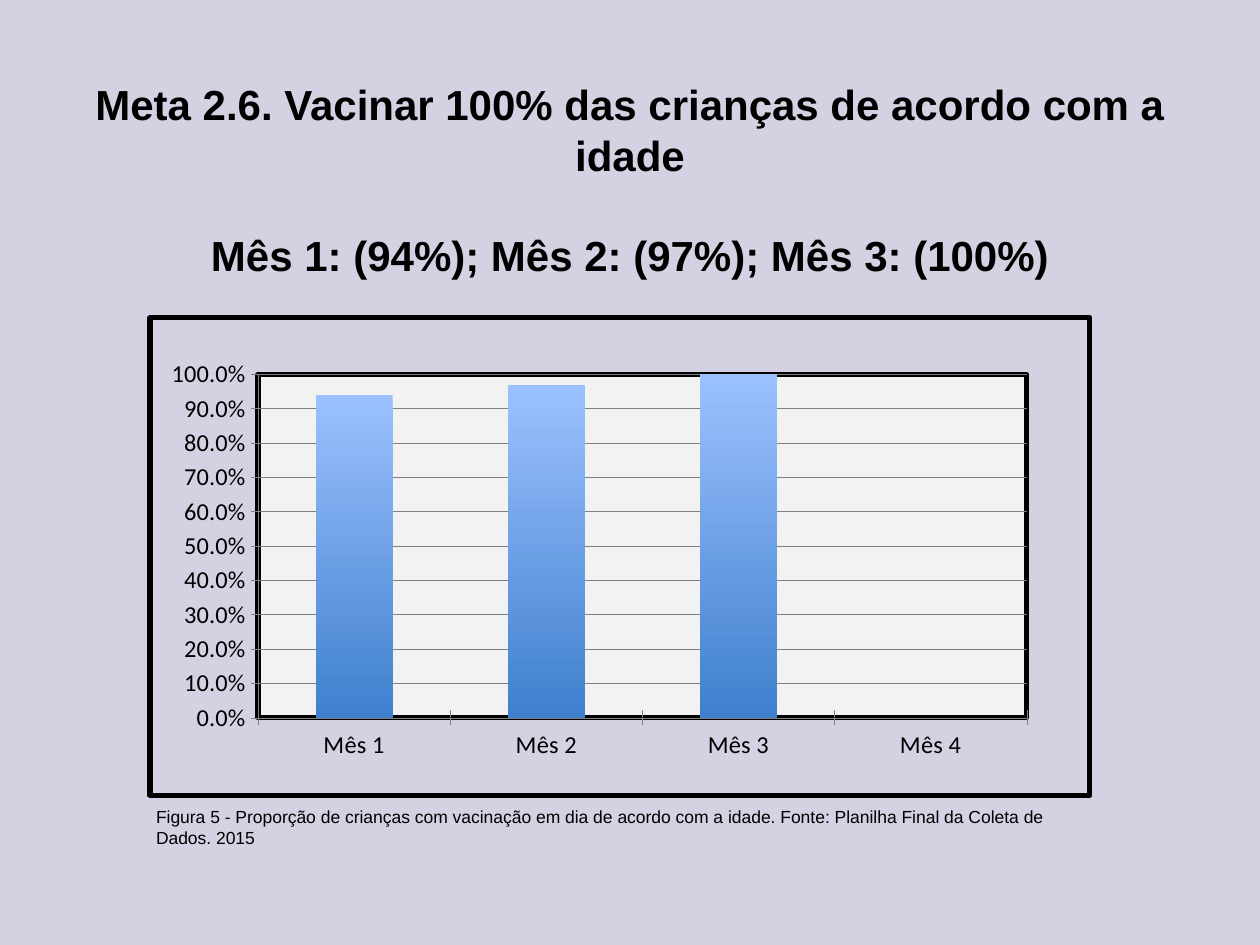
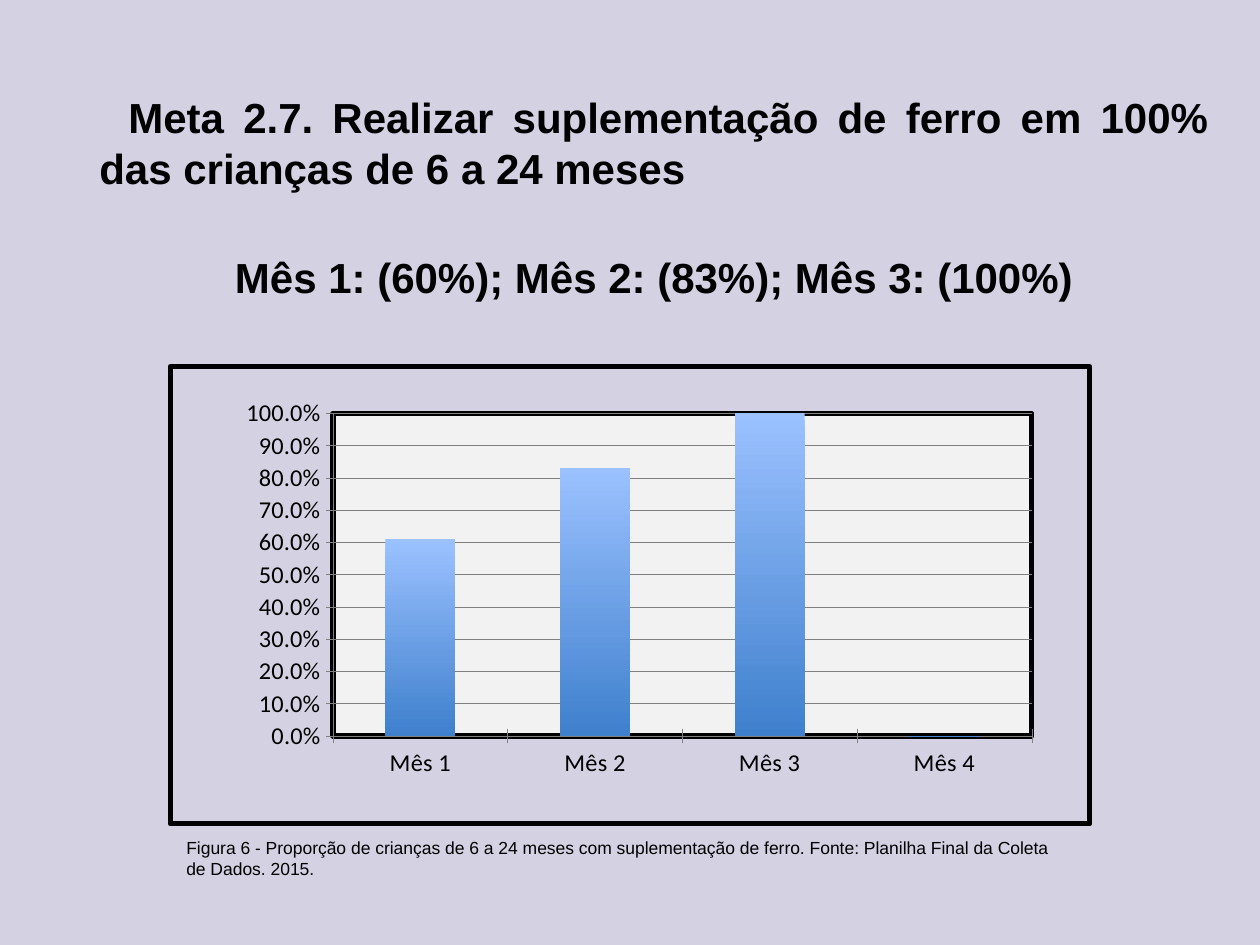
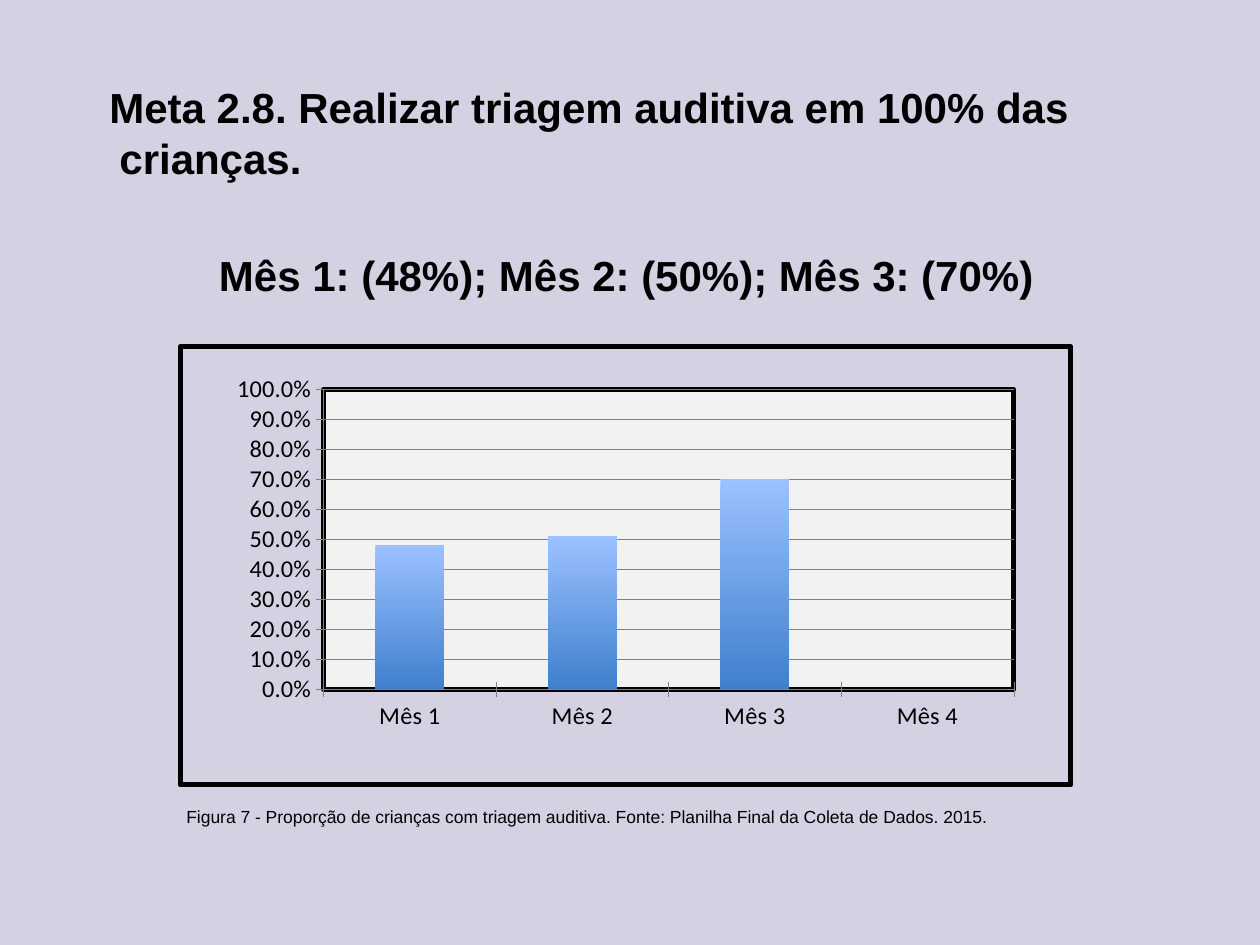
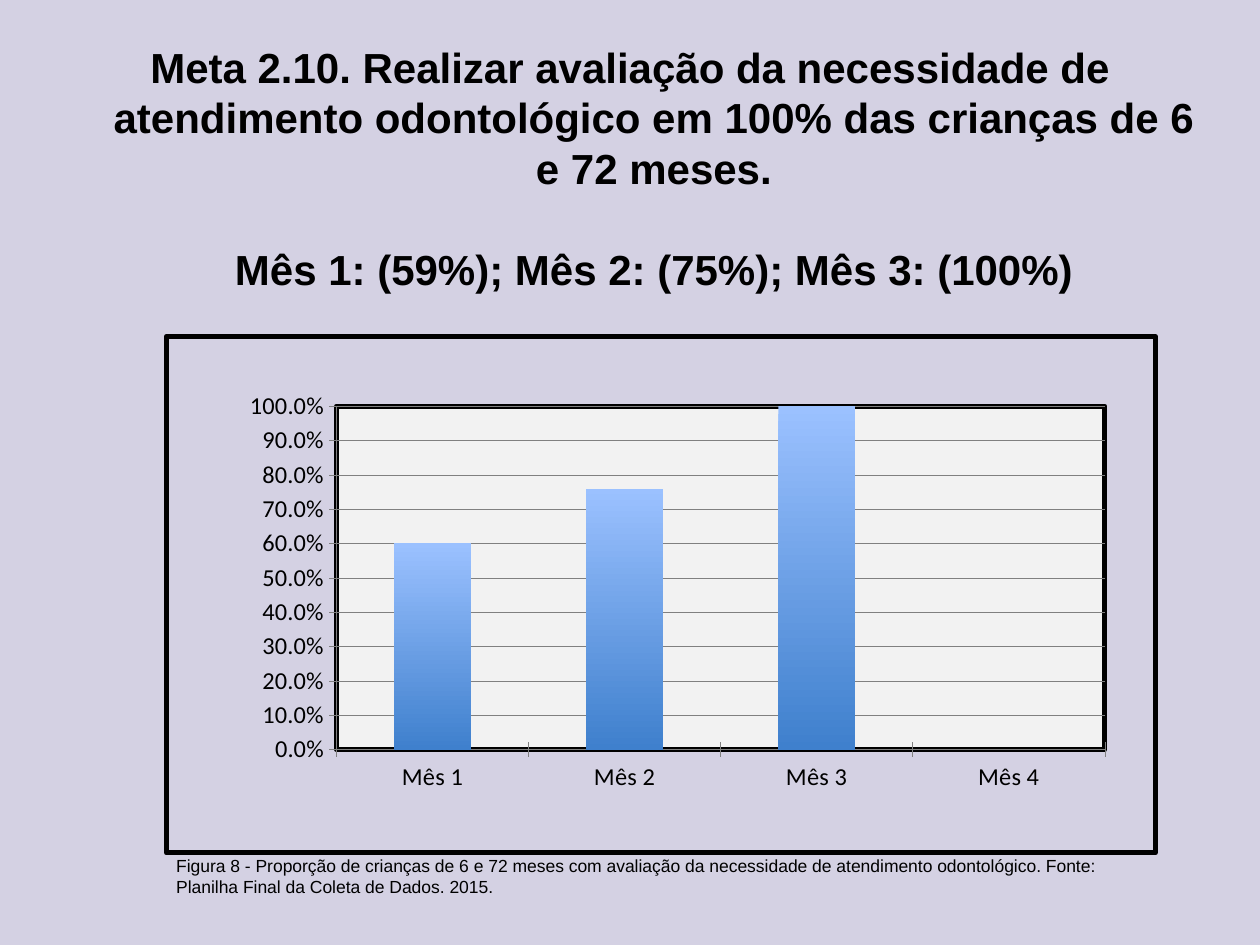
from dataclasses import dataclass

from pptx import Presentation
from pptx.chart.data import CategoryChartData
from pptx.dml.color import RGBColor
from pptx.enum.chart import XL_CHART_TYPE, XL_TICK_MARK
from pptx.enum.text import MSO_ANCHOR, PP_ALIGN
from pptx.oxml import parse_xml
from pptx.oxml.ns import nsdecls
from pptx.util import Inches, Pt


@dataclass(frozen=True)
class Theme:
    """Colours, fonts and sizes shared by all slides."""
    background: str = "D4D1E3"
    ink: str = "000000"
    grid: str = "808080"
    plot: str = "F2F2F2"
    bar_top: str = "9BC1FF"
    bar_bottom: str = "3F80CD"
    text_font: str = "Arial"
    chart_font: str = "Calibri"
    heading_size: int = 24
    axis_size: int = 14
    caption_size: int = 10
    border: int = 3
    hairline: float = 0.25
    lead: float = 4.8
    line: float = 28.8


@dataclass(frozen=True)
class Goal:
    """Heading, figures and caption of one goal; boxes are percent of the slide."""
    heading: str
    months: str
    heading_box: tuple
    heading_format: dict
    months_format: dict
    values: tuple
    chart_box: tuple
    plot_box: tuple
    caption: str
    caption_box: tuple


THEME = Theme()
WIDTH, HEIGHT = Inches(10), Inches(7.5)
CATEGORIES = ("Mês 1", "Mês 2", "Mês 3", "Mês 4")
HANGING = 0.38
GAP = THEME.lead + THEME.line

GOALS = (
    Goal(
        "Meta 2.6. Vacinar 100% das crianças de acordo com a idade",
        "Mês 1: (94%); Mês 2: (97%); Mês 3: (100%)",
        (5, 13.33, 90, 16.67),
        dict(align=PP_ALIGN.CENTER, anchor=MSO_ANCHOR.MIDDLE, bottom=0.45),
        dict(align=PP_ALIGN.CENTER, before=THEME.line),
        (0.94, 0.97, 1, 0),
        (11.7, 33.33, 75, 51.1), (0.115, 0.119, 0.818, 0.719),
        "Figura 5 - Proporção de crianças com vacinação em dia de acordo com a "
        "idade. Fonte: Planilha Final da Coleta de Dados. 2015",
        (11.4, 84.67, 74, 5.87),
    ),
    Goal(
        "Meta 2.7. Realizar suplementação de ferro em 100% das crianças de 6 a "
        "24 meses",
        "Mês 1: (60%); Mês 2: (83%); Mês 3: (100%)",
        (3.1, 9.07, 93.8, 26),
        dict(align=PP_ALIGN.JUSTIFY, margin=HANGING, indent=0.23, before=THEME.lead),
        dict(align=PP_ALIGN.CENTER, margin=HANGING, before=GAP),
        (0.61, 0.83, 1, 0),
        (13.3, 38.53, 73.4, 48.93), (0.177, 0.102, 0.76, 0.706),
        "Figura 6 - Proporção de crianças de 6 a 24 meses com suplementação de "
        "ferro. Fonte: Planilha Final da Coleta de Dados. 2015.",
        (13.8, 87.87, 70.9, 9.87),
    ),
    Goal(
        "Meta 2.8. Realizar triagem auditiva em 100% das crianças.",
        "Mês 1: (48%); Mês 2: (50%); Mês 3: (70%)",
        (4.7, 8, 90, 20.8),
        dict(margin=HANGING, indent=-0.08, before=THEME.lead),
        dict(align=PP_ALIGN.CENTER, margin=HANGING, indent=-HANGING,
             before=GAP + THEME.lead),
        (0.48, 0.51, 0.7, 0),
        (14.1, 36.4, 71.1, 46.93), (0.161, 0.098, 0.775, 0.684),
        "Figura 7 - Proporção de crianças com triagem auditiva. Fonte: Planilha "
        "Final da Coleta de Dados. 2015.",
        (13.8, 84.67, 70.1, 7.6),
    ),
    Goal(
        "Meta 2.10. Realizar avaliação da necessidade de atendimento "
        "odontológico em 100% das crianças de 6 e 72 meses.",
        "Mês 1: (59%); Mês 2: (75%); Mês 3: (100%)",
        (3.1, 3.73, 93.8, 39.6),
        dict(align=PP_ALIGN.CENTER, margin=HANGING, indent=-HANGING,
             before=THEME.lead),
        dict(align=PP_ALIGN.CENTER, margin=HANGING, before=THEME.line),
        (0.6, 0.76, 1, 0),
        (13, 35.33, 78.9, 55.2), (0.172, 0.135, 0.777, 0.665),
        "Figura 8 - Proporção de crianças de 6 e 72 meses com avaliação da "
        "necessidade de atendimento odontológico. Fonte: Planilha Final da "
        "Coleta de Dados. 2015.",
        (13, 89.87, 78, 9.87),
    ),
)


def color(value):
    """Turn a hex colour into an RGBColor."""
    return RGBColor.from_string(value)


def place(box):
    """Turn percentages of the slide into left, top, width and height."""
    return [round(side * share / 100)
            for side, share in zip((WIDTH, HEIGHT) * 2, box)]


def add_frame(slide, box, anchor=MSO_ANCHOR.TOP, bottom=0.05):
    """Add a wrapping text box and return its text frame."""
    frame = slide.shapes.add_textbox(*place(box)).text_frame
    frame.word_wrap = True
    frame.vertical_anchor = anchor
    frame.margin_bottom = Inches(bottom)
    return frame


def write(paragraph, text, size, bold=False, align=PP_ALIGN.LEFT, margin=0,
          indent=0, before=0):
    """Write formatted text into a paragraph."""
    run = paragraph.add_run()
    run.text = text
    run.font.name = THEME.text_font
    run.font.size = Pt(size)
    run.font.bold = bold
    run.font.color.rgb = color(THEME.ink)
    paragraph.alignment = align
    paragraph.space_before = Pt(before)
    properties = paragraph._p.get_or_add_pPr()
    properties.set("marL", str(Inches(margin)))
    properties.set("indent", str(Inches(indent)))


def add_heading(slide, goal):
    """Add the goal and its monthly results."""
    options = dict(goal.heading_format)
    frame_options = {key: options.pop(key) for key in ("anchor", "bottom")
                     if key in options}
    frame = add_frame(slide, goal.heading_box, **frame_options)
    write(frame.paragraphs[0], goal.heading, THEME.heading_size, bold=True, **options)
    write(frame.add_paragraph(), goal.months, THEME.heading_size, bold=True,
          **goal.months_format)


def area_properties(fill):
    """Return chart area formatting with the thick border."""
    return parse_xml(
        f'<c:spPr {nsdecls("c", "a")}>{fill}<a:ln w="{Pt(THEME.border)}"><a:solidFill>'
        f'<a:srgbClr val="{THEME.ink}"/></a:solidFill><a:round/></a:ln></c:spPr>')


def frame_chart(chart, plot_box):
    """Border the chart and its plot area, and fix the inner plot position."""
    chart_element = chart._chartSpace.chart
    chart_element.addnext(area_properties("<a:noFill/>"))
    plot_area = chart_element.plotArea
    plot_area.append(area_properties(
        f'<a:solidFill><a:srgbClr val="{THEME.plot}"/></a:solidFill>'))
    for layout in plot_area.findall("{*}layout"):
        plot_area.remove(layout)
    sides = "".join(f'<c:{name} val="{share}"/>'
                    for name, share in zip("xywh", plot_box))
    plot_area.insert(0, parse_xml(
        f'<c:layout {nsdecls("c")}><c:manualLayout><c:layoutTarget val="inner"/>'
        f'<c:xMode val="edge"/><c:yMode val="edge"/>{sides}'
        '</c:manualLayout></c:layout>'))


def style_line(line):
    """Draw a thin grey line."""
    line.color.rgb = color(THEME.grid)
    line.width = Pt(THEME.hairline)


def style_font(font, size):
    """Set the chart font."""
    font.name = THEME.chart_font
    font.size = Pt(size)
    font.color.rgb = color(THEME.ink)


def style_axes(chart):
    """Format both axes and the percentage scale."""
    for axis in (chart.category_axis, chart.value_axis):
        axis.major_tick_mark = XL_TICK_MARK.CROSS
        axis.minor_tick_mark = XL_TICK_MARK.NONE
        style_font(axis.tick_labels.font, THEME.axis_size)
        style_line(axis.format.line)
    scale = chart.value_axis
    scale.minimum_scale, scale.maximum_scale, scale.major_unit = 0, 1, 0.1
    scale.tick_labels.number_format = "0.0%"
    scale.tick_labels.number_format_is_linked = False
    style_line(scale.major_gridlines.format.line)


def add_bar_chart(slide, goal):
    """Add the framed column chart of monthly proportions."""
    data = CategoryChartData(number_format="0.0%")
    data.categories = CATEGORIES
    data.add_series("Series 1", goal.values)
    chart = slide.shapes.add_chart(
        XL_CHART_TYPE.COLUMN_CLUSTERED, *place(goal.chart_box), data).chart
    chart.has_title = False
    chart.has_legend = False
    style_font(chart.font, THEME.caption_size)
    style_axes(chart)
    plot = chart.plots[0]
    plot.gap_width = 150
    plot.vary_by_categories = False
    fill = plot.series[0].format.fill
    fill.gradient()
    fill.gradient_angle = 270
    for stop, shade in zip(fill.gradient_stops, (THEME.bar_top, THEME.bar_bottom)):
        stop.color.rgb = color(shade)
    frame_chart(chart, goal.plot_box)


def add_goal_slide(presentation, goal):
    """Build one slide with heading, chart and caption."""
    slide = presentation.slides.add_slide(presentation.slide_layouts[6])
    background = slide.background.fill
    background.solid()
    background.fore_color.rgb = color(THEME.background)
    add_heading(slide, goal)
    add_bar_chart(slide, goal)
    caption = add_frame(slide, goal.caption_box)
    write(caption.paragraphs[0], goal.caption, THEME.caption_size)


def main():
    """Build and save the presentation."""
    presentation = Presentation()
    presentation.slide_width, presentation.slide_height = WIDTH, HEIGHT
    for goal in GOALS:
        add_goal_slide(presentation, goal)
    presentation.save("out.pptx")


if __name__ == "__main__":
    main()
